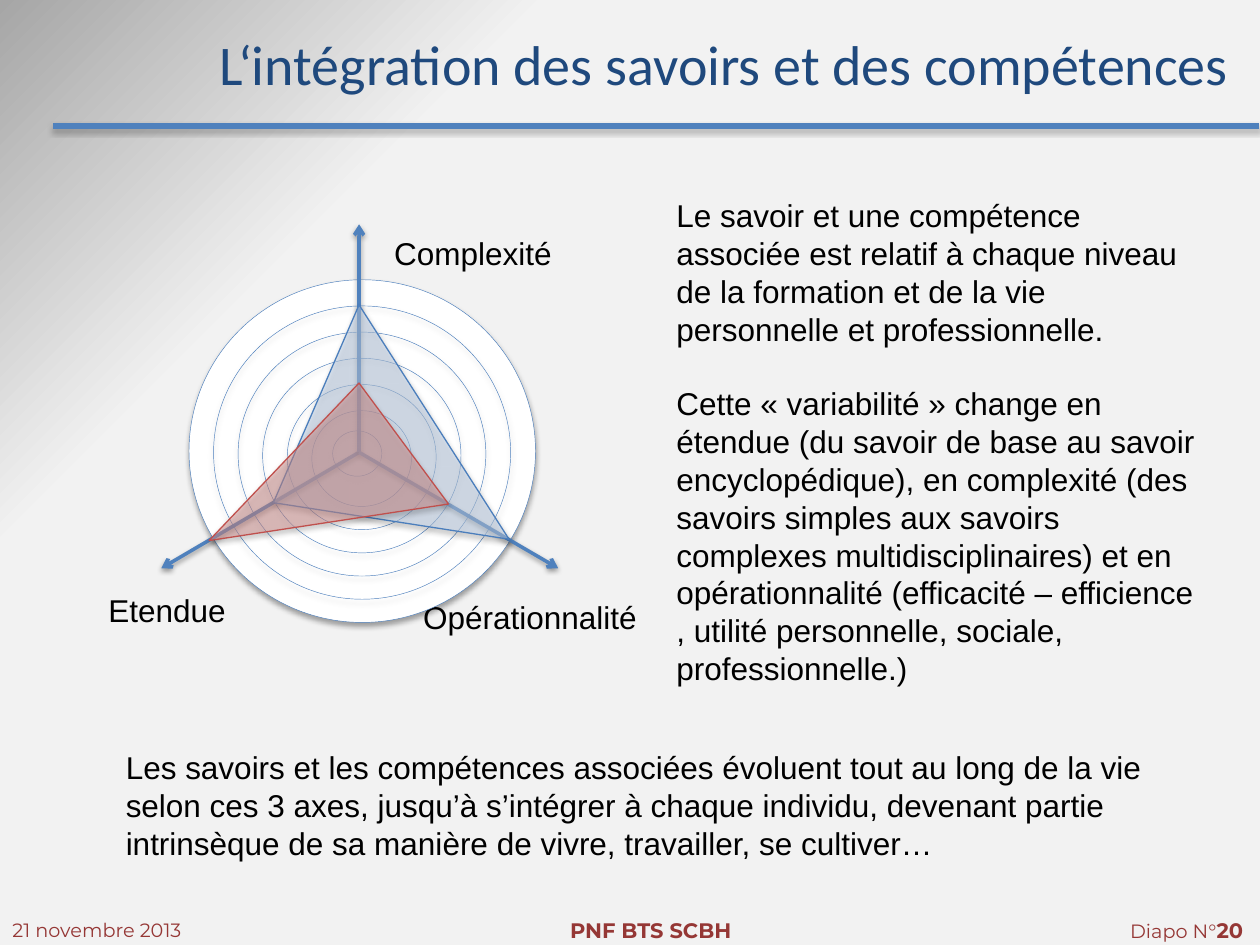
from dataclasses import dataclass

from lxml import etree
from pptx import Presentation
from pptx.dml.color import RGBColor
from pptx.enum.shapes import MSO_CONNECTOR, MSO_SHAPE
from pptx.enum.text import MSO_ANCHOR, PP_ALIGN
from pptx.oxml import parse_xml
from pptx.oxml.ns import nsdecls, qn
from pptx.util import Emu, Pt

PX = 9144
LEFT, CENTER, RIGHT = PP_ALIGN.LEFT, PP_ALIGN.CENTER, PP_ALIGN.RIGHT
TOP, MIDDLE = MSO_ANCHOR.TOP, MSO_ANCHOR.MIDDLE
STRAIGHT, OVAL = MSO_CONNECTOR.STRAIGHT, MSO_SHAPE.OVAL


@dataclass(frozen=True)
class Theme:
    title_font: str = "Calibri"
    body_font: str = "Arial"
    footer_font: str = "Montserrat"
    title_size: int = 32
    body_size: int = 18
    footer_size: int = 11
    footer_strong_size: int = 12
    paragraph_gap: int = 21
    title: str = "1F497D"
    text: str = "000000"
    footer: str = "953735"
    accent: str = "4F81BD"
    ring_line: str = "4B7EBC"
    ring_fill: str = "FFFFFF"
    blue_fill: str = "C6D9F1"
    red_fill: str = "D99694"
    red_line: str = "C0504D"
    light: str = "F2F2F2"
    dark: str = "A6A6A6"


THEME = Theme()

TITLE = "L‘intégration des savoirs et des compétences"
TITLE_BOX = (150, 0, 850, 100)
RULE = ((42, 100), (999, 100))

FOOTERS = [
    ((0, 724, 201, 29), LEFT, [("21 novembre 2013", False)]),
    ((425, 723, 183, 30), CENTER, [("PNF BTS SCBH", True)]),
    ((887, 723, 125, 30), LEFT, [("Diapo N°", False), ("20", True)]),
]

AXIS_LABELS = [
    ((326, 470, 201, 40), LEFT, "Opérationnalité"),
    ((75, 464, 114, 40), RIGHT, "Etendue"),
    ((303, 181, 168, 40), LEFT, "Complexité"),
]
AXIS_ORIGIN = (285, 359)
AXIS_ENDS = [(128, 451), (285, 178), (443, 451)]

OUTER_RING = (150, 222, 275, 272)
CORE_RING = (264, 342, 39, 36)
STEPPED_RINGS = 6
RING_STEP = (19.5, 20.8, -39.2, -39.2)

PROFILES = [
    ([(285, 242), (404, 428), (217, 399)], THEME.blue_fill, THEME.ring_line),
    ([(166, 429), (285, 304), (356, 400)], THEME.red_fill, THEME.red_line),
]

BODY_TEXTS = [
    ((527, 151, 436, 404), [
        "Le savoir et une compétence associée est relatif à chaque niveau de la "
        "formation et de la vie personnelle et professionnelle.",
        "Cette « variabilité » change en étendue (du savoir de base au savoir "
        "encyclopédique), en complexité (des savoirs simples aux savoirs complexes "
        "multidisciplinaires) et en opérationnalité (efficacité – efficience , utilité "
        "personnelle, sociale, professionnelle.)",
    ]),
    ((90, 589, 873, 101), [
        "Les savoirs et les compétences associées évoluent tout au long de la vie selon "
        "ces 3 axes, jusqu’à s’intégrer à chaque individu, devenant partie intrinsèque "
        "de sa manière de vivre, travailler, se cultiver…",
    ]),
]


def emu(lengths):
    return [Emu(round(length * PX)) for length in lengths]


def rgb(color):
    return RGBColor.from_string(color)


def write(shape, paragraphs, *, font=THEME.body_font, size=THEME.body_size,
          strong_size=THEME.body_size, color=THEME.text, align=LEFT, anchor=TOP):
    frame = shape.text_frame
    frame.word_wrap = True
    frame.vertical_anchor = anchor
    for index, runs in enumerate(paragraphs):
        paragraph = frame.add_paragraph() if index else frame.paragraphs[0]
        paragraph.alignment = align
        if index:
            paragraph.space_before = Pt(THEME.paragraph_gap)
        for text, strong in [(runs, False)] if isinstance(runs, str) else runs:
            run = paragraph.add_run()
            run.text = text
            run.font.name = font
            run.font.size = Pt(strong_size if strong else size)
            run.font.bold = strong
            run.font.color.rgb = rgb(color)


def add_text(slide, box, paragraphs, **text_format):
    write(slide.shapes.add_textbox(*emu(box)), paragraphs, **text_format)


def outline(shape, color, width, *, opacity=35, distance=23000):
    shape.line.color.rgb = rgb(color)
    shape.line.width = Pt(width)
    shape._element.spPr.append(parse_xml(
        f'<a:effectLst {nsdecls("a")}><a:outerShdw blurRad="40000" dist="{distance}" '
        f'dir="5400000" rotWithShape="0"><a:srgbClr val="000000">'
        f'<a:alpha val="{opacity * 1000}"/></a:srgbClr></a:outerShdw></a:effectLst>'))


def add_line(slide, start, end, width, *, arrow=False, **shadow):
    line = slide.shapes.add_connector(STRAIGHT, *emu(start + end))
    outline(line, THEME.accent, width, **shadow)
    if arrow:
        etree.SubElement(line.line._get_or_add_ln(), qn("a:tailEnd"), type="arrow")


def add_ring(slide, box, fill=None):
    ring = slide.shapes.add_shape(OVAL, *emu(box))
    if fill:
        ring.fill.solid()
        ring.fill.fore_color.rgb = rgb(fill)
    else:
        ring.fill.background()
    outline(ring, THEME.ring_line, 0.25)


def add_profile(slide, points, fill, line):
    builder = slide.shapes.build_freeform(*points[0], scale=PX)
    builder.add_line_segments(points[1:], close=True)
    profile = builder.convert_to_shape()
    profile.fill.solid()
    profile.fill.fore_color.rgb = rgb(fill)
    color = profile._element.spPr.find(qn("a:solidFill"))[0]
    etree.SubElement(color, qn("a:alpha"), val="49000")
    outline(profile, line, 0.75)


def set_background(slide):
    stops = "".join(f'<a:gs pos="{place}"><a:srgbClr val="{color}"/></a:gs>'
                    for place, color in [(75000, THEME.light), (100000, THEME.dark)])
    slide.element.cSld.insert(0, parse_xml(
        f'<p:bg {nsdecls("p", "a")}><p:bgPr><a:gradFill rotWithShape="1">'
        f'<a:gsLst>{stops}</a:gsLst><a:path path="circle">'
        f'<a:fillToRect l="100000" t="100000"/></a:path></a:gradFill>'
        f'<a:effectLst/></p:bgPr></p:bg>'))


def add_diagram(slide):
    for box, align, label in AXIS_LABELS:
        add_text(slide, box, [label], align=align)
    add_ring(slide, OUTER_RING, THEME.ring_fill)
    for end in AXIS_ENDS:
        add_line(slide, AXIS_ORIGIN, end, 2, arrow=True, opacity=38, distance=20000)
    for index in range(1, STEPPED_RINGS):
        add_ring(slide, [start + index * step for start, step in zip(OUTER_RING, RING_STEP)])
    add_ring(slide, CORE_RING)
    for points, fill, line in PROFILES:
        add_profile(slide, points, fill, line)


def main():
    presentation = Presentation()
    presentation.slide_width, presentation.slide_height = emu((1000, 750))
    slide = presentation.slides.add_slide(presentation.slide_layouts[5])
    set_background(slide)
    add_line(slide, *RULE, 3)
    for box, align, runs in FOOTERS:
        add_text(slide, box, [runs], font=THEME.footer_font, size=THEME.footer_size,
                 strong_size=THEME.footer_strong_size, color=THEME.footer, align=align)
    title = slide.shapes.title
    title.left, title.top, title.width, title.height = emu(TITLE_BOX)
    write(title, [TITLE], font=THEME.title_font, size=THEME.title_size,
          color=THEME.title, align=CENTER, anchor=MIDDLE)
    add_diagram(slide)
    for box, paragraphs in BODY_TEXTS:
        add_text(slide, box, paragraphs)
    presentation.save("out.pptx")


if __name__ == "__main__":
    main()
